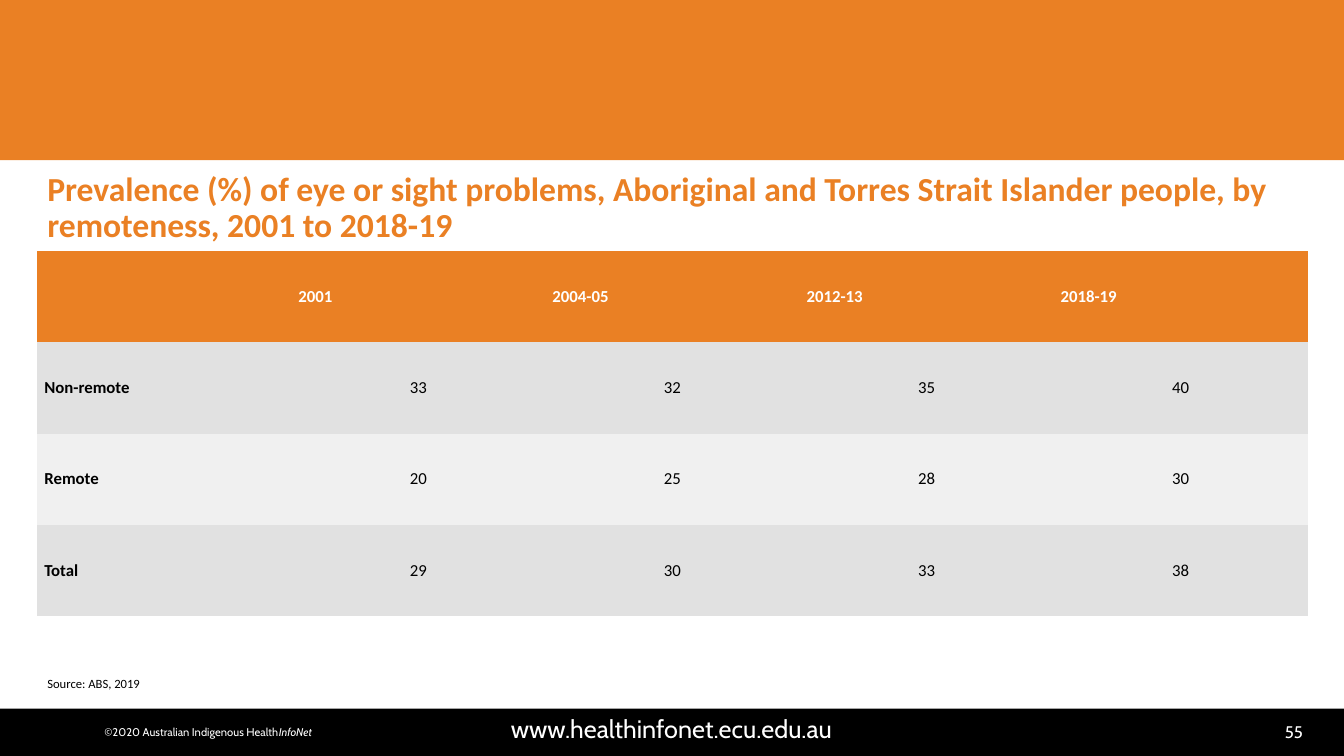
from dataclasses import dataclass

from pptx import Presentation
from pptx.dml.color import RGBColor
from pptx.enum.shapes import MSO_SHAPE
from pptx.enum.text import MSO_ANCHOR, PP_ALIGN
from pptx.util import Inches, Pt

RECTANGLE = MSO_SHAPE.RECTANGLE
MIDDLE = MSO_ANCHOR.MIDDLE
LEFT, CENTER, RIGHT, JUSTIFY = (
    PP_ALIGN.LEFT, PP_ALIGN.CENTER, PP_ALIGN.RIGHT, PP_ALIGN.JUSTIFY)
BLANK_LAYOUT = 6
PLAIN_TABLE_STYLE = "{2D5ABB26-0587-4C30-8999-92F81FD0307C}"


@dataclass(frozen=True)
class Theme:
    accent: RGBColor = RGBColor.from_string("EA8024")
    black: RGBColor = RGBColor.from_string("000000")
    white: RGBColor = RGBColor.from_string("FFFFFF")
    dark_row: RGBColor = RGBColor.from_string("E1E1E1")
    light_row: RGBColor = RGBColor.from_string("F0F0F0")
    body_font: str = "Calibri"
    footer_font: str = "Cabin"
    title_size: float = 24
    website_size: float = 18
    table_size: float = 12
    page_size: float = 12
    source_size: float = 9
    copyright_size: float = 8


class SlideBuilder:
    """Places elements by percent of the slide's width and height."""

    def __init__(self, deck, theme):
        self.deck = deck
        self.theme = theme
        self.slide = deck.slides.add_slide(deck.slide_layouts[BLANK_LAYOUT])

    def place(self, left, top, width, height):
        across, down = self.deck.slide_width / 100, self.deck.slide_height / 100
        return (round(left * across), round(top * down),
                round(width * across), round(height * down))

    def apply(self, target, formats):
        for name, value in formats.items():
            setattr(target, name, value)

    def fill_line(self, paragraph, runs, font, size, color, bold=False, **layout):
        self.apply(paragraph, layout)
        for text, italic in runs:
            run = paragraph.add_run()
            run.text = text
            self.apply(run.font, {"name": font, "size": Pt(size),
                                  "bold": bold, "italic": italic})
            run.font.color.rgb = color

    def band(self, box, color):
        bar = self.slide.shapes.add_shape(RECTANGLE, *self.place(*box))
        bar.shadow.inherit = False
        bar.fill.solid()
        bar.fill.fore_color.rgb = color
        bar.line.fill.background()

    def text(self, box, runs, font, size, color, wrap=True, **layout):
        frame = self.slide.shapes.add_textbox(*self.place(*box)).text_frame
        self.apply(frame, {"word_wrap": wrap, "vertical_anchor": MIDDLE})
        self.fill_line(frame.paragraphs[0], runs, font, size, color, **layout)

    def table(self, box, rows):
        theme = self.theme
        table = self.slide.shapes.add_table(
            len(rows), len(rows[0]), *self.place(*box)).table
        table._tbl.tblPr.find("{*}tableStyleId").text = PLAIN_TABLE_STYLE
        for r, row in enumerate(rows):
            heading = r == 0
            stripe = theme.dark_row if r % 2 else theme.light_row
            for c, value in enumerate(row):
                cell = table.cell(r, c)
                cell.fill.solid()
                cell.fill.fore_color.rgb = theme.accent if heading else stripe
                self.apply(cell, {
                    "vertical_anchor": MIDDLE,
                    "margin_left": Inches(0.07), "margin_right": Inches(0.07),
                    "margin_top": 0, "margin_bottom": 0})
                if not value:
                    continue
                body_align = JUSTIFY if c == 0 else CENTER
                self.fill_line(
                    cell.text_frame.paragraphs[0], [(value, False)],
                    theme.body_font, theme.table_size,
                    theme.white if heading else theme.black,
                    bold=heading or c == 0,
                    alignment=LEFT if heading else body_align,
                    space_after=Pt(5))


TITLE = ("Prevalence (%) of eye or sight problems, Aboriginal and Torres Strait "
         "Islander people, by remoteness, 2001 to 2018-19")
PREVALENCE = [
    ["", "2001", "2004-05", "2012-13", "2018-19"],
    ["Non-remote", "33", "32", "35", "40"],
    ["Remote", "20", "25", "28", "30"],
    ["Total", "29", "30", "33", "38"],
]
MARGIN, CONTENT_WIDTH = 2.78, 94.52
FOOTER_TOP = 93.73


def main():
    deck = Presentation()
    deck.slide_width, deck.slide_height = Inches(13.33), Inches(7.5)
    theme = Theme()
    page = SlideBuilder(deck, theme)

    # Header and footer bands
    page.band((0, 0, 100, 21.2), theme.accent)
    page.band((0, FOOTER_TOP, 100, 100 - FOOTER_TOP), theme.black)

    # Footer texts
    page.text((89.65, 94.8, 8.03, 4), [("55", False)],
              theme.footer_font, theme.page_size, theme.white, alignment=RIGHT)
    page.text((4.65, FOOTER_TOP, 90.62, 5.2),
              [("www.healthinfonet.ecu.edu.au", False)],
              theme.footer_font, theme.website_size, theme.white,
              alignment=CENTER)
    page.text((6.9, 95.2, 17.18, 3.2),
              [("©2020 Australian Indigenous Health", False), ("InfoNet", True)],
              theme.footer_font, theme.copyright_size, theme.white,
              wrap=False, alignment=CENTER)

    # Title, prevalence table and source
    page.text((MARGIN, 22, CONTENT_WIDTH, 11.2), [(TITLE, False)],
              theme.body_font, theme.title_size, theme.accent,
              bold=True, line_spacing=0.9)
    page.table((MARGIN, 33.2, CONTENT_WIDTH, 48.3), PREVALENCE)
    page.text((MARGIN, 88.8, 8.48, 3.33), [("Source: ABS, 2019", False)],
              theme.body_font, theme.source_size, theme.black,
              wrap=False, alignment=LEFT, space_after=Pt(3))

    deck.save("out.pptx")


if __name__ == "__main__":
    main()
